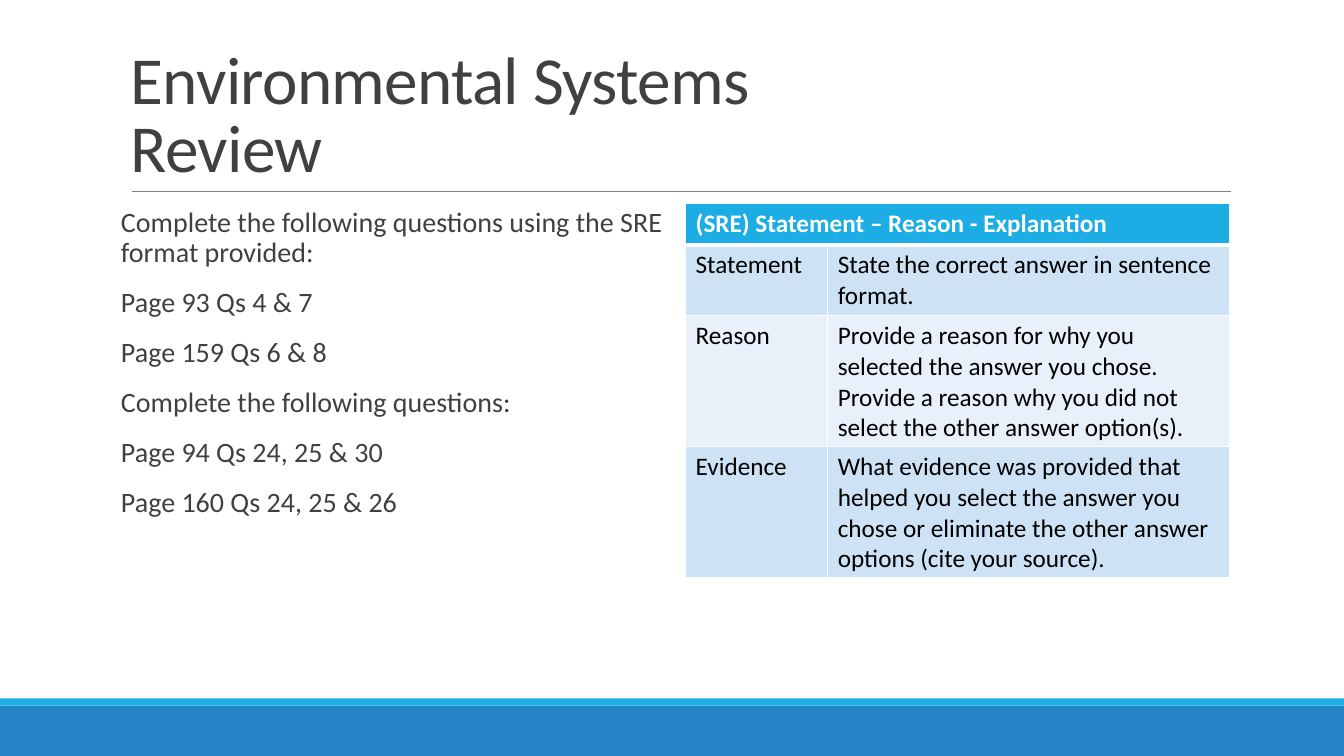
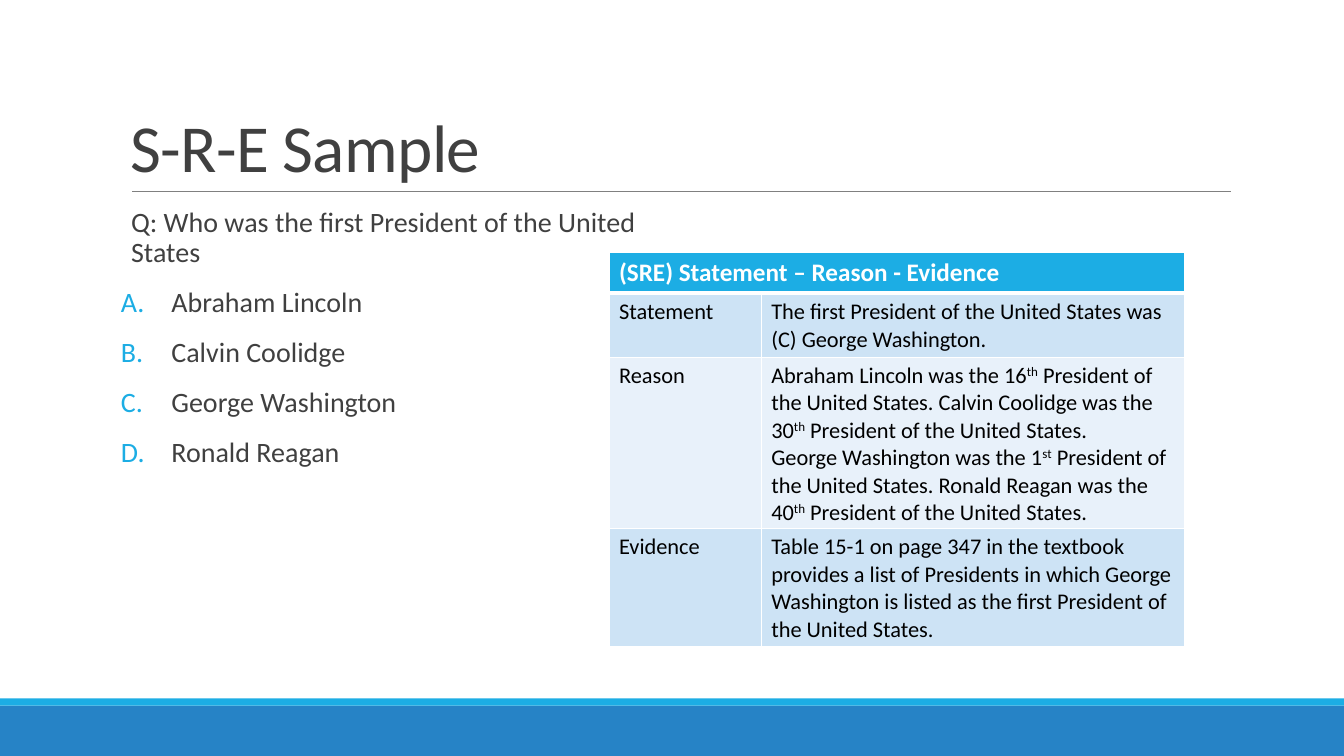
from dataclasses import dataclass

from lxml import etree
from pptx import Presentation
from pptx import util as u
from pptx.dml.color import RGBColor
from pptx.enum import shapes, text
from pptx.oxml import ns

# Shared look
FONT = "Calibri"
WHITE, BLACK, INK, GREY = "FFFFFF", "000000", "404040", "808080"
BLUE, CYAN = "2683C6", "1CADE4"
ROW_FILLS = ("CDE3F5", "E8F1FA")
PAGE_WIDTH, PAGE_HEIGHT = 13.33, 7.5
EMU_PER_POINT = 12700


@dataclass
class Item:
    """A body paragraph, lettered A., B., ... when asked."""
    words: str
    indent: float = 0
    lettered: bool = False


@dataclass
class Grid:
    """A table with a merged header; row text holds one entry per paragraph."""
    left: float
    top: float
    widths: tuple[float, float]
    heights: tuple[float, ...]
    header: str
    rows: list[tuple[str, list[str]]]
    size: float


@dataclass
class Sheet:
    title: str
    items: list[Item]
    grid: Grid


def color(value: str) -> RGBColor:
    return RGBColor.from_string(value)


def child(parent, tag: str, **attributes: str):
    return etree.SubElement(parent, ns.qn(tag), attributes)


# Text
def add_span(para, words: str, *, size: float, ink: str, bold: bool = False,
             spacing: int = 0, raised: bool = False) -> None:
    span = para.add_run()
    span.text = words
    span.font.name = FONT
    span.font.size = u.Pt(size)
    span.font.bold = bold
    span.font.color.rgb = color(ink)
    properties = span.font._element
    if spacing:
        properties.set("spc", str(spacing))
    if raised:
        properties.set("baseline", "30000")


def write(para, words: str, **style) -> None:
    """Write words; a line feed breaks the line and ^marks^ raise a part."""
    for row, line in enumerate(words.split("\n")):
        if row:
            para.add_line_break()
        for index, part in enumerate(line.split("^")):
            if part:
                add_span(para, part, raised=index % 2 == 1, **style)


def add_box(page, left: float, top: float, width: float, height: float, *,
            side_margin: float = 0.1, anchor=text.MSO_ANCHOR.TOP):
    box = page.shapes.add_textbox(*map(u.Inches, (left, top, width, height)))
    frame = box.text_frame
    frame.word_wrap = True
    frame.vertical_anchor = anchor
    frame.margin_left = frame.margin_right = u.Inches(side_margin)
    return frame


def add_title(page, words: str) -> None:
    frame = add_box(page, 1.2, 0.31, 11, 1.59, anchor=text.MSO_ANCHOR.BOTTOM)
    para = frame.paragraphs[0]
    para.line_spacing = 0.85
    write(para, words, size=48, ink=INK, spacing=-50)


def add_body(page, items: list[Item]) -> None:
    frame = add_box(page, 1.2, 2.02, 5.4, 4.4, side_margin=0)
    for index, item in enumerate(items):
        para = frame.add_paragraph() if index else frame.paragraphs[0]
        properties = para._p.get_or_add_pPr()
        properties.set("marL", str(u.Inches(item.indent)))
        if item.lettered:
            properties.set("indent", str(-u.Inches(item.indent)))
            child(child(properties, "a:buClr"), "a:srgbClr", val=CYAN)
            child(properties, "a:buFont", typeface=FONT)
            child(properties, "a:buAutoNum", type="alphaUcPeriod")
        para.line_spacing = 0.9
        para.space_before = u.Pt(12 if index else 0)
        para.space_after = u.Pt(2)
        write(para, item.words, size=20, ink=INK)


# Bands and rule
def add_band(page, top: float, height: float, fill: str) -> None:
    band = page.shapes.add_shape(
        shapes.MSO_SHAPE.RECTANGLE,
        *map(u.Inches, (0, top, PAGE_WIDTH, height)))
    band.shadow.inherit = False
    band.fill.solid()
    band.fill.fore_color.rgb = color(fill)
    band.line.fill.background()


def add_frame(page) -> None:
    add_band(page, 7, 0.5, BLUE)
    add_band(page, 6.93, 0.07, CYAN)
    rule = page.shapes.add_connector(
        shapes.MSO_CONNECTOR.STRAIGHT, *map(u.Inches, (1.31, 1.9, 12.21, 1.9)))
    rule.line.color.rgb = color(GREY)
    rule.line.width = u.Pt(0.5)
    child(rule._element.spPr, "a:effectLst")


# Table
def style_cell(cell, row: int) -> None:
    weights = {"L": 1, "R": 1, "T": 3 if row == 1 else 1, "B": 1 if row else 3}
    properties = cell._tc.get_or_add_tcPr()
    for side, weight in weights.items():
        edge = child(properties, f"a:ln{side}", w=str(weight * EMU_PER_POINT))
        child(child(edge, "a:solidFill"), "a:srgbClr", val=WHITE)
    cell.fill.solid()
    cell.fill.fore_color.rgb = color(ROW_FILLS[(row - 1) % 2] if row else CYAN)


def fill_cell(cell, paragraphs: list[str], **style) -> None:
    frame = cell.text_frame
    for index, words in enumerate(paragraphs):
        para = frame.add_paragraph() if index else frame.paragraphs[0]
        write(para, words, **style)


def add_grid(page, grid: Grid) -> None:
    table = page.shapes.add_table(
        len(grid.heights), len(grid.widths),
        *map(u.Inches, (grid.left, grid.top, sum(grid.widths),
                        sum(grid.heights)))).table
    for column, width in zip(table.columns, grid.widths):
        column.width = u.Inches(width)
    for index, height in enumerate(grid.heights):
        table.rows[index].height = u.Inches(height)
        for cell in table.rows[index].cells:
            style_cell(cell, index)
    table.cell(0, 0).merge(table.cell(0, 1))
    fill_cell(table.cell(0, 0), [grid.header], size=18, ink=WHITE, bold=True)
    for index, (label, paragraphs) in enumerate(grid.rows, start=1):
        fill_cell(table.cell(index, 0), [label], size=grid.size, ink=BLACK)
        fill_cell(table.cell(index, 1), paragraphs, size=grid.size, ink=BLACK)


# Content
REVIEW = Sheet(
    "Environmental Systems\nReview",
    [Item(words) for words in (
        "Complete the following questions using the SRE format provided:",
        "Page 93 Qs 4 & 7",
        "Page 159 Qs 6 & 8",
        "Complete the following questions:",
        "Page 94 Qs 24, 25 & 30",
        "Page 160 Qs 24, 25 & 26")],
    Grid(6.8, 2.02, (1.41, 3.99), (0.41, 0.7, 1.3, 1.3),
         "(SRE) Statement – Reason - Explanation",
         [("Statement", ["State the correct answer in sentence format."]),
          ("Reason", ["Provide a reason for why you selected the answer you "
                      "chose. Provide a reason why you did not select the "
                      "other answer option(s)."]),
          ("Evidence", ["What evidence was provided that helped you select "
                        "the answer you chose or eliminate the other answer "
                        "options (cite your source)."])],
         size=18))

SAMPLE = Sheet(
    "S-R-E Sample",
    [Item("Q: Who was the first President of the United States", 0.1)]
    + [Item(name, 0.5, lettered=True) for name in (
        "Abraham Lincoln", "Calvin Coolidge",
        "George Washington", "Ronald Reagan")],
    Grid(6.04, 2.5, (1.51, 4.2), (0.41, 0.63, 1.7, 1.17),
         "(SRE) Statement – Reason - Evidence",
         [("Statement", ["The first President of the United States was "
                         "(C) George Washington."]),
          ("Reason", ["Abraham Lincoln was the 16^th^ President of the United "
                      "States. Calvin Coolidge was the 30^th^ President of "
                      "the United States.",
                      "George Washington was the 1^st^ President of the "
                      "United States. Ronald Reagan was the 40^th^ President "
                      "of the United States."]),
          ("Evidence", ["Table 15-1 on page 347 in the textbook provides a "
                        "list of Presidents in which George Washington is "
                        "listed as the first President of the United "
                        "States."])],
         size=16))


def main() -> None:
    deck = Presentation()
    deck.slide_width = u.Inches(PAGE_WIDTH)
    deck.slide_height = u.Inches(PAGE_HEIGHT)
    for sheet in (REVIEW, SAMPLE):
        page = deck.slides.add_slide(deck.slide_layouts[6])
        add_frame(page)
        add_title(page, sheet.title)
        add_body(page, sheet.items)
        add_grid(page, sheet.grid)
    deck.save("out.pptx")


if __name__ == "__main__":
    main()
